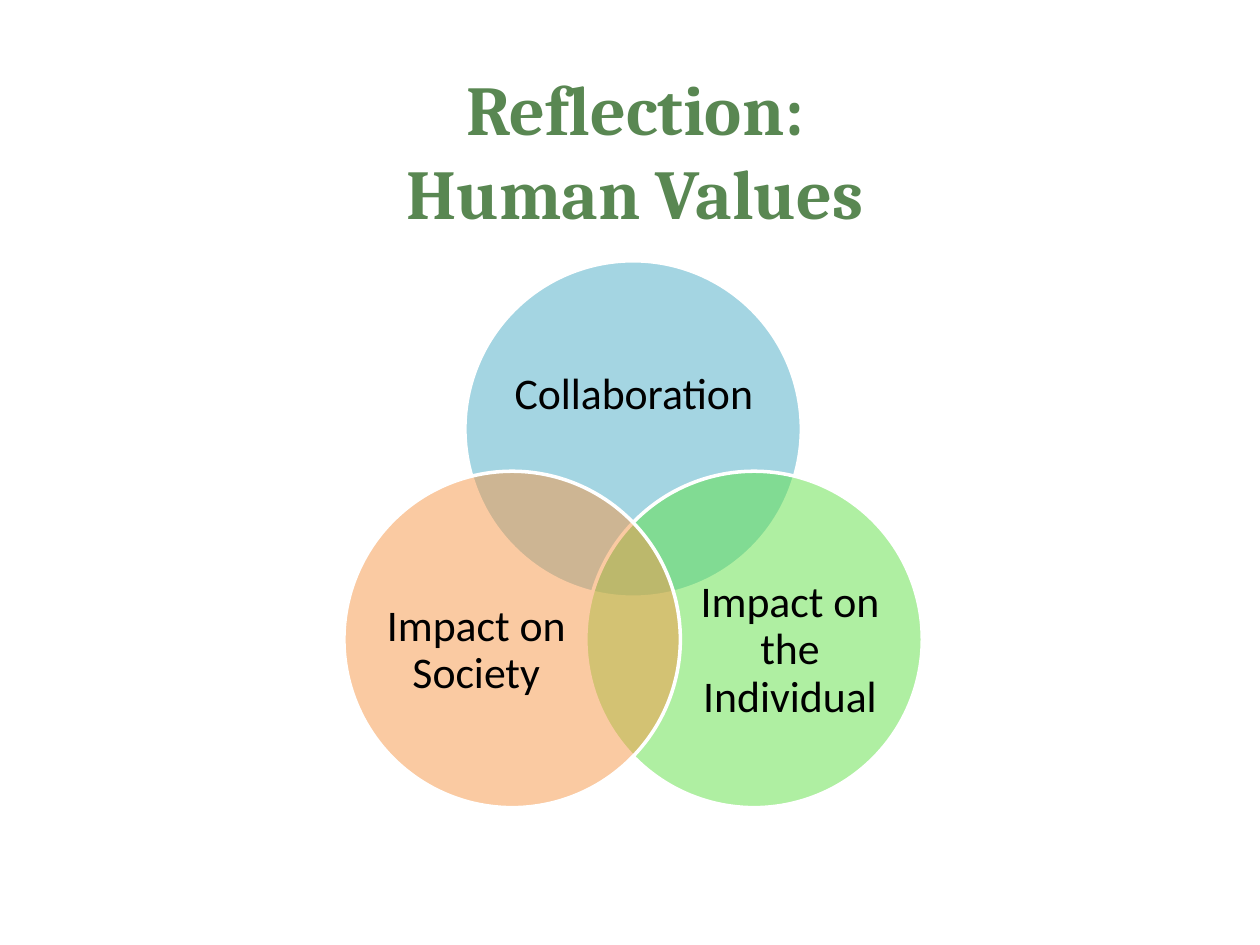
from dataclasses import dataclass

from lxml import etree
from pptx import Presentation
from pptx.dml.color import RGBColor
from pptx.enum import shapes, text
from pptx.oxml import ns
from pptx.util import Inches, Pt


@dataclass(frozen=True)
class Theme:
    title_color: str = "598752"
    label_color: str = "000000"
    outline: str = "FFFFFF"
    blue: str = "4BACC6"
    green: str = "60E146"
    orange: str = "F79646"
    title_font: str = "Cambria"
    label_font: str = "Calibri"
    title_size: int = 40
    label_size: int = 25


THEME = Theme()
DIAMETER = 2.67


def clear_margins(frame):
    frame.margin_left = frame.margin_right = 0
    frame.margin_top = frame.margin_bottom = 0
    frame.word_wrap = True
    frame.auto_size = text.MSO_AUTO_SIZE.NONE


def add_centred_run(paragraph, words, font_name, size, color):
    paragraph.alignment = text.PP_ALIGN.CENTER
    run = paragraph.add_run()
    run.text = words
    run.font.name = font_name
    run.font.size = Pt(size)
    run.font.color.rgb = RGBColor.from_string(color)
    return run


def fill_title(slide, lines):
    title = slide.shapes.title
    title.left, title.top = Inches(0.59), Inches(0.52)
    title.width, title.height = Inches(8.9), Inches(0.87)
    frame = title.text_frame
    clear_margins(frame)
    frame.vertical_anchor = text.MSO_ANCHOR.TOP
    for index, line in enumerate(lines):
        paragraph = frame.add_paragraph() if index else frame.paragraphs[0]
        paragraph.line_spacing = Pt(48)
        run = add_centred_run(paragraph, line, THEME.title_font,
                              THEME.title_size, THEME.title_color)
        run.font.bold = True


def add_venn_circle(slide, left, top, color):
    """Add a half-transparent circle with a white outline."""
    circle = slide.shapes.add_shape(
        shapes.MSO_SHAPE.OVAL, Inches(left), Inches(top),
        Inches(DIAMETER), Inches(DIAMETER))
    circle.shadow.inherit = False
    circle.fill.solid()
    circle.fill.fore_color.rgb = RGBColor.from_string(color)
    fill_color = circle._element.spPr.find(
        f"{ns.qn('a:solidFill')}/{ns.qn('a:srgbClr')}")
    etree.SubElement(fill_color, ns.qn("a:alpha"), val="50000")
    circle.line.color.rgb = RGBColor.from_string(THEME.outline)
    circle.line.width = Pt(2)


def add_label(slide, words, left, top, width, height):
    box = slide.shapes.add_textbox(
        Inches(left), Inches(top), Inches(width), Inches(height))
    frame = box.text_frame
    clear_margins(frame)
    frame.vertical_anchor = text.MSO_ANCHOR.MIDDLE
    paragraph = frame.paragraphs[0]
    paragraph.line_spacing = 0.9
    add_centred_run(paragraph, words, THEME.label_font,
                    THEME.label_size, THEME.label_color)


def main():
    presentation = Presentation()
    presentation.slide_width, presentation.slide_height = Inches(10), Inches(7.5)
    slide = presentation.slides.add_slide(presentation.slide_layouts[5])
    fill_title(slide, ["Reflection:", "Human Values"])

    top_left, top_row, bottom_row, spread = 3.69, 2.07, 3.74, 0.96
    side_label = (1.6, 1.47)
    # words, colour, circle position, label offset in the circle, label size
    values = [
        ("Collaboration", THEME.blue, (top_left, top_row),
         (0.36, 0.47), (1.96, 1.2)),
        ("Impact on the Individual", THEME.green, (top_left + spread, bottom_row),
         (0.82, 0.69), side_label),
        ("Impact on Society", THEME.orange, (top_left - spread, bottom_row),
         (0.25, 0.69), side_label),
    ]
    for words, color, (left, top), (shift_x, shift_y), size in values:
        add_venn_circle(slide, left, top, color)
        add_label(slide, words, left + shift_x, top + shift_y, *size)

    presentation.save("out.pptx")


if __name__ == "__main__":
    main()
